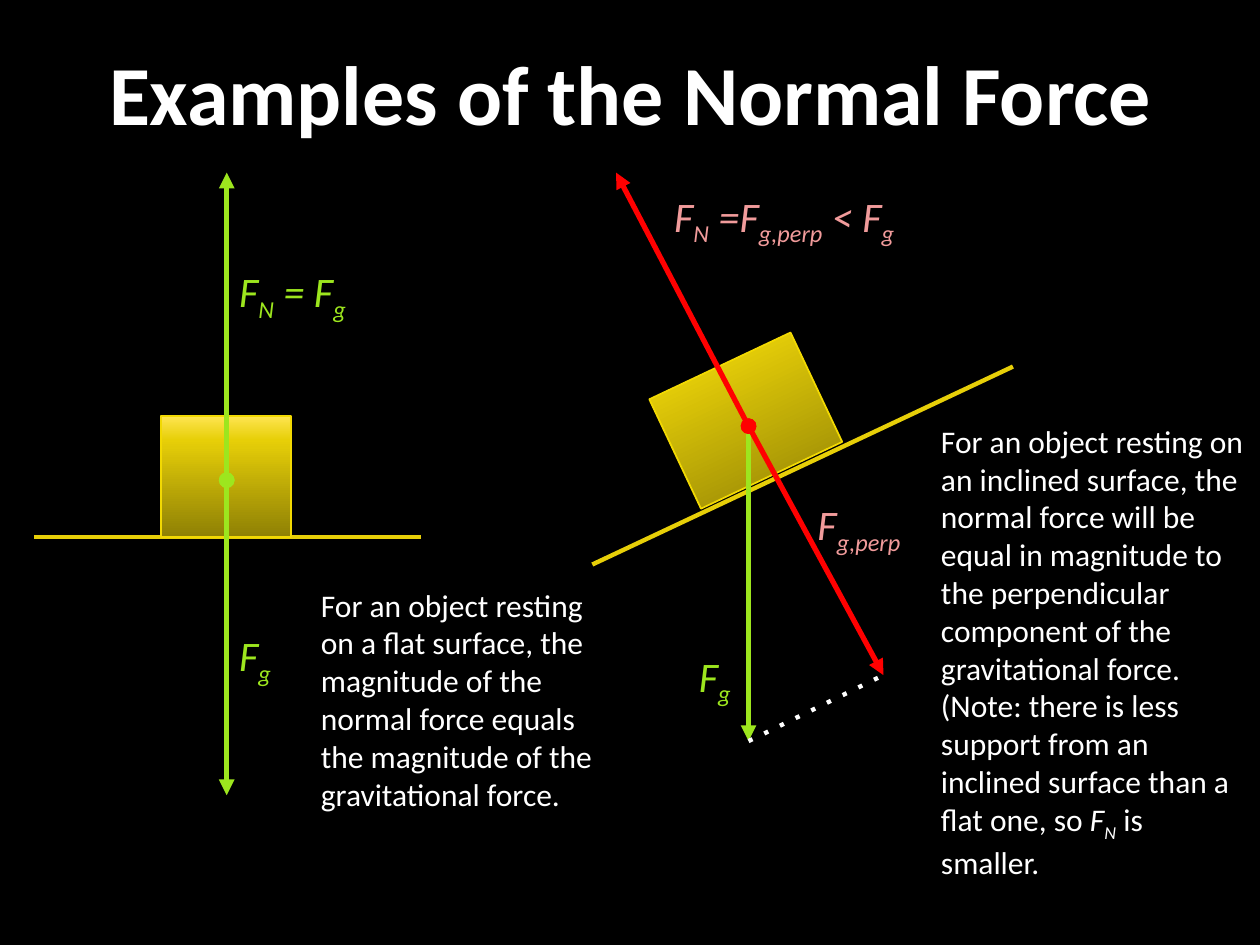
from copy import deepcopy
from dataclasses import dataclass

from lxml import etree
from pptx import Presentation
from pptx import util as u
from pptx.dml import color as col
from pptx.enum import shapes, text
from pptx.oxml import ns


@dataclass(frozen=True)
class Theme:
    font: str = "Calibri"
    back: str = "000000"
    white: str = "FFFFFF"
    gold: str = "E7CF08"
    edge: str = "F2D902"
    green: str = "9DE61E"
    red: str = "FF0000"
    pink: str = "F19B9B"
    shade: tuple = ((0, "8F8105"), (0.8, "E7CF08"), (1, "FFE552"))
    head: int = 48
    math: int = 24
    body: int = 18
    thin: float = 2.5
    thick: float = 3


def rgb(code):
    return col.RGBColor.from_string(code)


def sub(node, tag, **attrs):
    return etree.SubElement(node, ns.qn(tag), **attrs)


def formula(*parts):
    return [(part, True, i % 2 == 1) for i, part in enumerate(parts)]


class Board:
    def __init__(self, theme, slide):
        self.theme = theme
        self.slide = slide
        fill = slide.background.fill
        fill.solid()
        fill.fore_color.rgb = rgb(theme.back)

    def words(self, spot, runs, size, color):
        box = self.slide.shapes.add_textbox(*map(u.Cm, spot))
        frame = box.text_frame
        frame.word_wrap = True
        frame.auto_size = text.MSO_AUTO_SIZE.SHAPE_TO_FIT_TEXT
        para = frame.paragraphs[0]
        for part, slant, low in runs:
            run = para.add_run()
            run.text = part
            font = run.font
            font.name = self.theme.font
            font.size = u.Pt(size)
            font.italic = slant
            font.color.rgb = rgb(color)
            if low:
                run._r.get_or_add_rPr().set("baseline", "-25000")
        return frame

    def title(self, spot, head):
        theme = self.theme
        frame = self.words(spot, [(head, False, False)], theme.head, theme.white)
        frame.auto_size = text.MSO_AUTO_SIZE.NONE
        frame.vertical_anchor = text.MSO_ANCHOR.MIDDLE
        para = frame.paragraphs[0]
        para.alignment = text.PP_ALIGN.CENTER
        para.runs[0].font.bold = True

    def label(self, x, y, wide, color, *parts):
        self.words((x, y, wide, 1.27), formula(*parts), self.theme.math, color)

    def note(self, spot, *runs):
        self.words(spot, runs, self.theme.body, self.theme.white)

    def line(self, start, end, color, width):
        link = self.slide.shapes.add_connector(
            shapes.MSO_CONNECTOR.STRAIGHT, *map(u.Cm, start + end))
        link.line.color.rgb = rgb(color)
        link.line.width = u.Pt(width)
        props = link._element.spPr
        sub(props, "a:effectLst")
        return props.find(ns.qn("a:ln"))

    def surface(self, start, end):
        self.line(start, end, self.theme.gold, self.theme.thin)

    def dotted(self, start, end):
        edge = self.line(start, end, self.theme.white, self.theme.thin)
        sub(edge, "a:prstDash", val="dot")

    def force(self, start, end, color):
        edge = self.line(start, end, color, self.theme.thick)
        sub(edge, "a:headEnd", type="oval")
        sub(edge, "a:tailEnd", type="triangle")

    def block(self, spot, turn=0):
        box = self.slide.shapes.add_shape(
            shapes.MSO_SHAPE.RECTANGLE, *map(u.Cm, spot))
        box.shadow.inherit = False
        box.rotation = turn
        box.line.color.rgb = rgb(self.theme.edge)
        box.line.width = u.Pt(1)
        fill = box.fill
        fill.gradient()
        fill.gradient_angle = 90
        stops = box._element.spPr.find(".//" + ns.qn("a:gsLst"))
        stops.append(deepcopy(stops[0]))
        for stop, (place, code) in zip(fill.gradient_stops, self.theme.shade):
            stop.position = place
            stop.color.rgb = rgb(code)


def flat(board):
    theme = board.theme
    x = 4.57
    mid = (x, 9.68)
    board.surface((0.69, 10.82), (8.48, 10.82))
    board.block((3.25, 8.38, 2.62, 2.44))
    for tip in (16.03, 3.48):
        board.force(mid, (x, tip), theme.green)
    board.label(x, 5.23, 3.02, theme.green, "F", "N", " = F", "g")
    board.label(x, 12.57, 1.52, theme.green, "F", "g")
    board.note((6.22, 11.68, 5.99, 6.4), (
        "For an object resting on a flat surface, the magnitude of the normal "
        "force equals the magnitude of the gravitational force.", False, False))


def incline(board):
    theme = board.theme
    mid, down, perp = (15.09, 8.59), (15.09, 14.94), (17.81, 13.61)
    board.surface((11.94, 11.38), (20.42, 7.39))
    board.block((13.46, 7.26, 3.15, 2.44), 334.7)
    board.label(13.84, 12.98, 1.47, theme.green, "F", "g")
    board.force(mid, down, theme.green)
    board.dotted(down, perp)
    for tip in (perp, (12.42, 3.48)):
        board.force(mid, tip, theme.red)
    board.label(16.23, 9.93, 3.48, theme.pink, "F", "g,perp")
    board.label(13.34, 3.71, 7.8, theme.pink,
                "F", "N", " =F", "g,perp", " < F", "g")
    board.note((18.72, 8.38, 6.68, 9.5), (
        "For an object resting on an inclined surface, the normal force will be "
        "equal in magnitude to the perpendicular component of the gravitational "
        "force. (Note: there is less support from an inclined surface than a "
        "flat one, so ", False, False),
        *formula("F", "N"), (" is smaller.", False, False))


def main():
    deck = Presentation()
    deck.slide_width = u.Cm(25.4)
    deck.slide_height = u.Cm(19.05)
    board = Board(Theme(), deck.slides.add_slide(deck.slide_layouts[6]))
    board.title((0.56, 0.3, 24.31, 3.1), "Examples of the Normal Force")
    flat(board)
    incline(board)
    deck.save("out.pptx")


if __name__ == "__main__":
    main()
